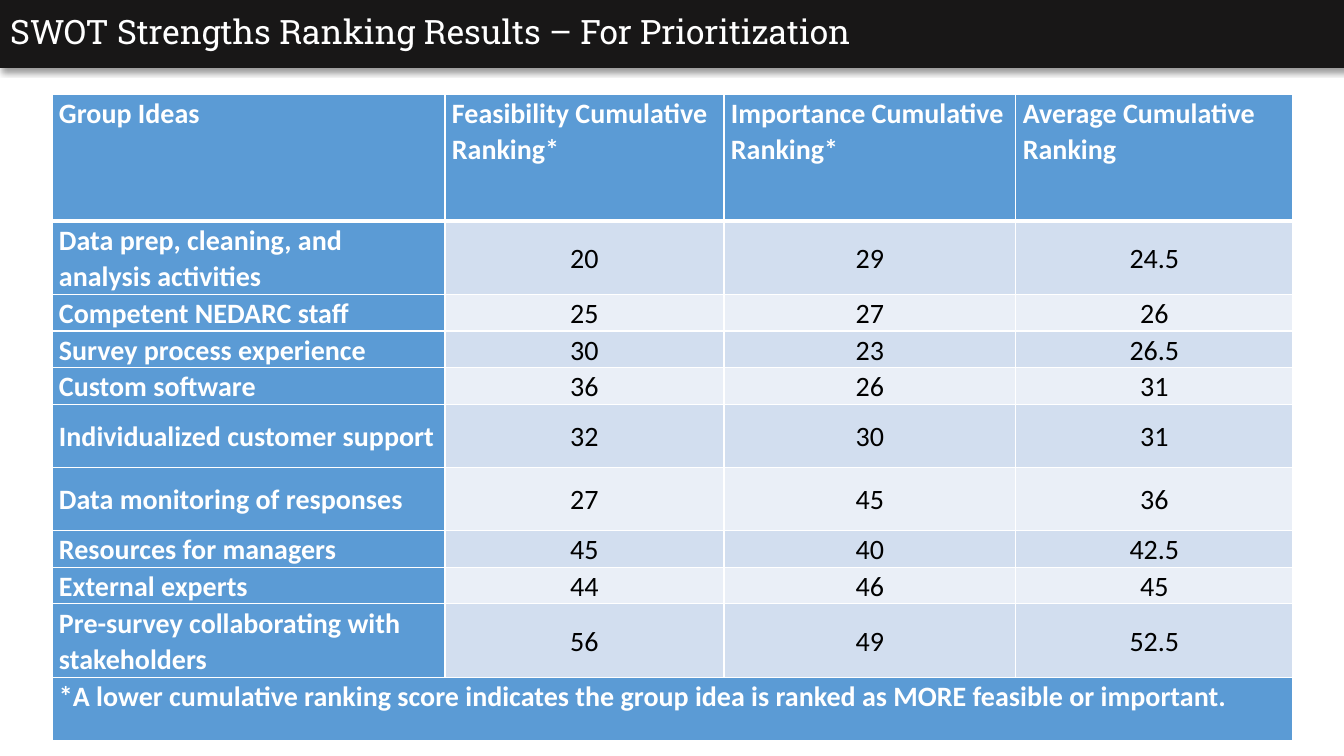
from lxml import etree
from pptx import Presentation, util as u
from pptx.dml.color import RGBColor
from pptx.enum import text
from pptx.oxml import parse_xml
from pptx.oxml.ns import nsdecls, qn

TITLE = "SWOT Strengths Ranking Results – For Prioritization"
HEADER = ("Group Ideas", "Feasibility Cumulative Ranking*",
          "Importance Cumulative Ranking*", "Average Cumulative Ranking")
IDEAS = [
    ("Data prep, cleaning, and analysis activities", "20", "29", "24.5"),
    ("Competent NEDARC staff", "25", "27", "26"),
    ("Survey process experience", "30", "23", "26.5"),
    ("Custom software", "36", "26", "31"),
    ("Individualized customer support", "32", "30", "31"),
    ("Data monitoring of responses", "27", "45", "36"),
    ("Resources for managers", "45", "40", "42.5"),
    ("External experts", "44", "46", "45"),
    ("Pre-survey collaborating with stakeholders", "56", "49", "52.5"),
]
FOOTNOTE = ("*A lower cumulative ranking score indicates the group idea is "
            "ranked as MORE feasible or important.")

COLS = (393, 279, 292, 277)
ROWS = (127, 72, 36, 36, 36, 63, 63, 36, 36, 72, 63)
WHITE, BLACK, BAR, BLUE = "FFFFFF", "000000", "181717", "5B9BD5"
BANDS = ("D2DEEF", "EAEFF7")


def px(n):
    return u.Emu(round(n * 914400 / 100.8))


def rgb(value):
    return RGBColor.from_string(value)


def fill(obj, color):
    obj.fill.solid()
    obj.fill.fore_color.rgb = rgb(color)


def write(tf, value, *, font="Calibri", size=20, color=WHITE, bold=False,
          align=text.PP_ALIGN.LEFT, spacing=1.0):
    p = tf.paragraphs[0]
    p.alignment = align
    p.line_spacing = spacing
    r = p.add_run()
    r.text = value
    r.font.name, r.font.size, r.font.bold = font, u.Pt(size), bold
    r.font.color.rgb = rgb(color)


def border(cell, **widths):
    """Draw white cell borders; widths in points by side L, R, T, B."""
    tcPr = cell._tc.get_or_add_tcPr()
    for side, width in widths.items():
        ln = etree.SubElement(tcPr, qn(f"a:ln{side}"), w=str(u.Pt(width)))
        solid = etree.SubElement(ln, qn("a:solidFill"))
        etree.SubElement(solid, qn("a:srgbClr"), val=WHITE)


def add_title(s):
    sp = s.shapes.title
    sp.left, sp.top, sp.width, sp.height = px(0), px(-6), px(1353), px(74)
    fill(sp, BAR)
    sp._element.spPr.append(parse_xml(
        f'<a:effectLst {nsdecls("a")}><a:outerShdw blurRad="{u.Pt(4)}" '
        f'dist="{u.Pt(3)}" dir="5400000" rotWithShape="0">'
        f'<a:srgbClr val="{BLACK}"><a:alpha val="40000"/></a:srgbClr>'
        '</a:outerShdw></a:effectLst>'))
    tf = sp.text_frame
    tf.auto_size = text.MSO_AUTO_SIZE.NONE
    tf.vertical_anchor = text.MSO_ANCHOR.MIDDLE
    write(tf, TITLE, font="Roboto Slab", size=24)


def add_ranking(s):
    rows = [HEADER, *IDEAS, (FOOTNOTE,)]
    last = len(rows) - 1
    table = s.shapes.add_table(len(rows), len(COLS), px(52), px(94),
                               px(sum(COLS)), px(sum(ROWS))).table
    for col, width in zip(table.columns, COLS):
        col.width = px(width)
    for row, height in zip(table.rows, ROWS):
        row.height = px(height)
    table.cell(last, 0).merge(table.cell(last, len(COLS) - 1))

    for i, values in enumerate(rows):
        for j, value in enumerate(values):
            cell = table.cell(i, j)
            idea = 0 < i < last
            score = idea and j > 0
            cell.margin_left = cell.margin_right = px(7)
            cell.margin_top = cell.margin_bottom = 0
            cell.vertical_anchor = (text.MSO_ANCHOR.MIDDLE if idea
                                    else text.MSO_ANCHOR.TOP)
            border(cell, L=1, R=1, T=3 if i == 1 else 1, B=3 if i == 0 else 1)
            fill(cell, BANDS[(i - 1) % 2] if score else BLUE)
            write(cell.text_frame, value, color=BLACK if score else WHITE,
                  bold=not score, spacing=1.07,
                  align=text.PP_ALIGN.CENTER if score else text.PP_ALIGN.LEFT)


def main():
    prs = Presentation()
    prs.slide_width, prs.slide_height = px(1344), px(756)
    s = prs.slides.add_slide(prs.slide_layouts[5])
    add_title(s)
    add_ranking(s)
    prs.save("out.pptx")


if __name__ == "__main__":
    main()
